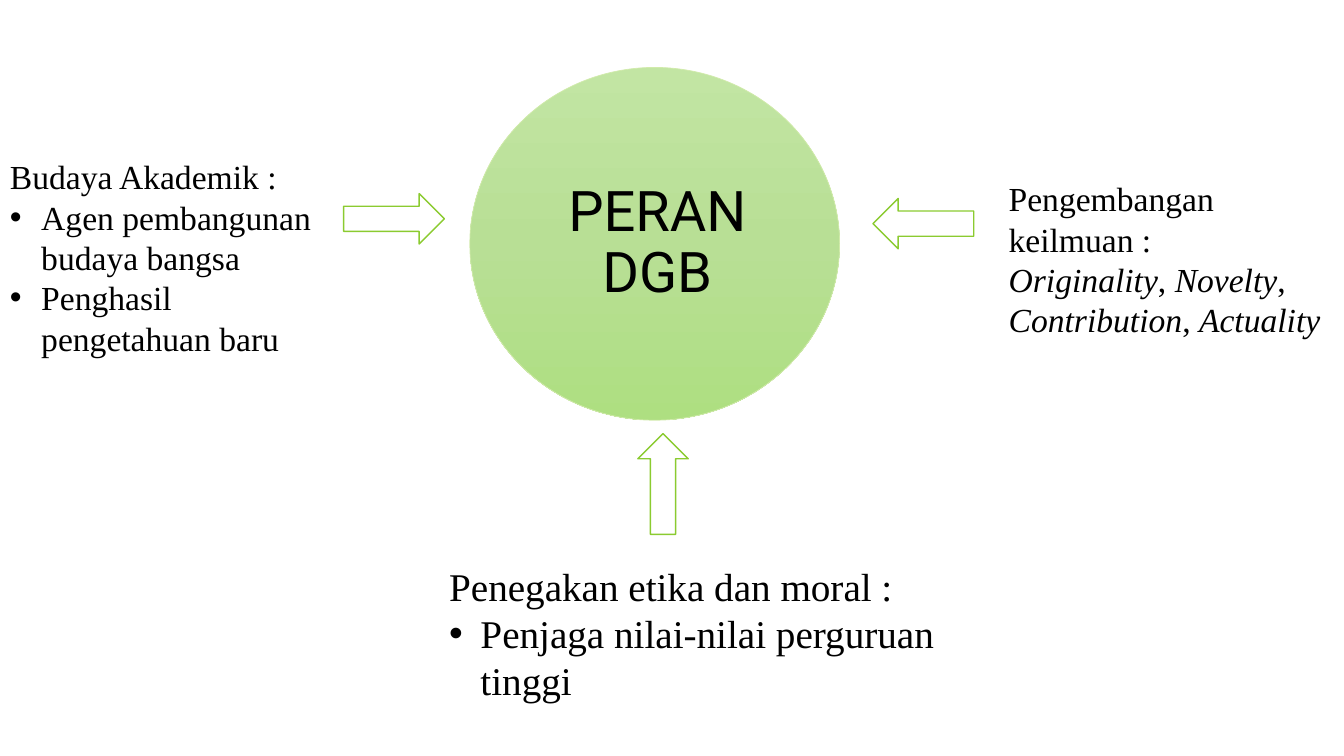
import copy

import pptx
import pptx.dml.color
import pptx.enum.shapes
import pptx.enum.text
import pptx.oxml
import pptx.oxml.ns
import pptx.util

Cm = pptx.util.Cm
Pt = pptx.util.Pt
SHAPE = pptx.enum.shapes.MSO_SHAPE
ALIGN = pptx.enum.text.PP_ALIGN
ANCHOR = pptx.enum.text.MSO_ANCHOR


def color(hex_string):
    return pptx.dml.color.RGBColor.from_string(hex_string)


def write(paragraph, text, *, font, size, italic=False):
    run = paragraph.add_run()
    run.text = text
    run.font.name = font
    run.font.size = Pt(size)
    run.font.italic = italic
    run.font.color.rgb = color("000000")


def set_indent(paragraph, left, first=0, bullet=None):
    properties = paragraph._p.get_or_add_pPr()
    properties.set("marL", str(Cm(left)))
    properties.set("indent", str(Cm(first)))
    if bullet:
        namespace = pptx.oxml.ns.nsdecls("a")
        for element in ('buFont typeface="Arial"', f'buChar char="{bullet}"'):
            properties.append(pptx.oxml.parse_xml(f"<a:{element} {namespace}/>"))


class RoleSlide:
    BODY_FONT = "Times New Roman"
    TITLE_FONT = "Roboto"
    ARROW_SIZE = (2.54, 1.27)

    def __init__(self, presentation):
        self.slide = presentation.slides.add_slide(presentation.slide_layouts[6])

    def shape(self, kind, left, top, width, height, line, line_width):
        shape = self.slide.shapes.add_shape(
            kind, Cm(left), Cm(top), Cm(width), Cm(height))
        shape.shadow.inherit = False
        shape.line.color.rgb = color(line)
        shape.line.width = Pt(line_width)
        return shape

    def circle(self, text, left, top, width, height):
        circle = self.shape(SHAPE.OVAL, left, top, width, height, "D1EBAB", 0.5)
        circle.fill.gradient()
        circle.fill.gradient_angle = 270
        first = circle.fill.gradient_stops[0]._gs
        first.addnext(copy.deepcopy(first))
        stops = ((0, "C2E5A3"), (0.5, "B8DF95"), (1, "AEDF81"))
        for stop, (position, shade) in zip(circle.fill.gradient_stops, stops):
            stop.position = position
            stop.color.rgb = color(shade)
        frame = circle.text_frame
        frame.word_wrap = True
        frame.vertical_anchor = ANCHOR.MIDDLE
        paragraph = frame.paragraphs[0]
        paragraph.alignment = ALIGN.CENTER
        paragraph.line_spacing = 0.9
        set_indent(paragraph, 0.13)
        write(paragraph, text, font=self.TITLE_FONT, size=40)

    def arrow(self, left, top, rotation):
        arrow = self.shape(
            SHAPE.RIGHT_ARROW, left, top, *self.ARROW_SIZE, "8BCB30", 1)
        arrow.fill.solid()
        arrow.fill.fore_color.rgb = color("FFFFFF")
        arrow.rotation = rotation

    def text_box(self, left, top, width, height, heading, size,
                 bullets=(), terms=(), heading_alignment=ALIGN.LEFT):
        """Add a heading followed by bullets or by a line of italic terms."""
        box = self.slide.shapes.add_textbox(
            Cm(left), Cm(top), Cm(width), Cm(height))
        frame = box.text_frame
        frame.word_wrap = True
        style = {"font": self.BODY_FONT, "size": size}
        paragraph = frame.paragraphs[0]
        paragraph.alignment = heading_alignment
        write(paragraph, heading, **style)
        for bullet in bullets:
            paragraph = frame.add_paragraph()
            set_indent(paragraph, 0.79, -0.79, "•")
            write(paragraph, bullet, **style)
        if terms:
            paragraph = frame.add_paragraph()
        for index, term in enumerate(terms):
            if index:
                write(paragraph, ", ", **style)
            write(paragraph, term, italic=True, **style)


def main():
    presentation = pptx.Presentation()
    presentation.slide_width = Cm(33.87)
    presentation.slide_height = Cm(19.05)
    roles = RoleSlide(presentation)

    roles.circle("PERAN DGB", 11.84, 1.7, 9.32, 8.89)
    for left, top, rotation in ((8.66, 4.88, 0), (15.44, 11.56, 270), (22, 5, 180)):
        roles.arrow(left, top, rotation)

    roles.text_box(0, 3.81, 8.46, 5.38, "Budaya Akademik :", 24,
                   bullets=("Agen pembangunan budaya bangsa",
                            "Penghasil pengetahuan baru"))
    roles.text_box(11.07, 14.05, 13.87, 3.84, "Penegakan etika dan moral :", 28,
                   bullets=("Penjaga nilai-nilai perguruan tinggi",),
                   heading_alignment=ALIGN.JUSTIFY)
    roles.text_box(25.17, 4.37, 8.66, 4.37, "Pengembangan keilmuan :", 24,
                   terms=("Originality", "Novelty", "Contribution", "Actuality"))

    presentation.save("out.pptx")


if __name__ == "__main__":
    main()
